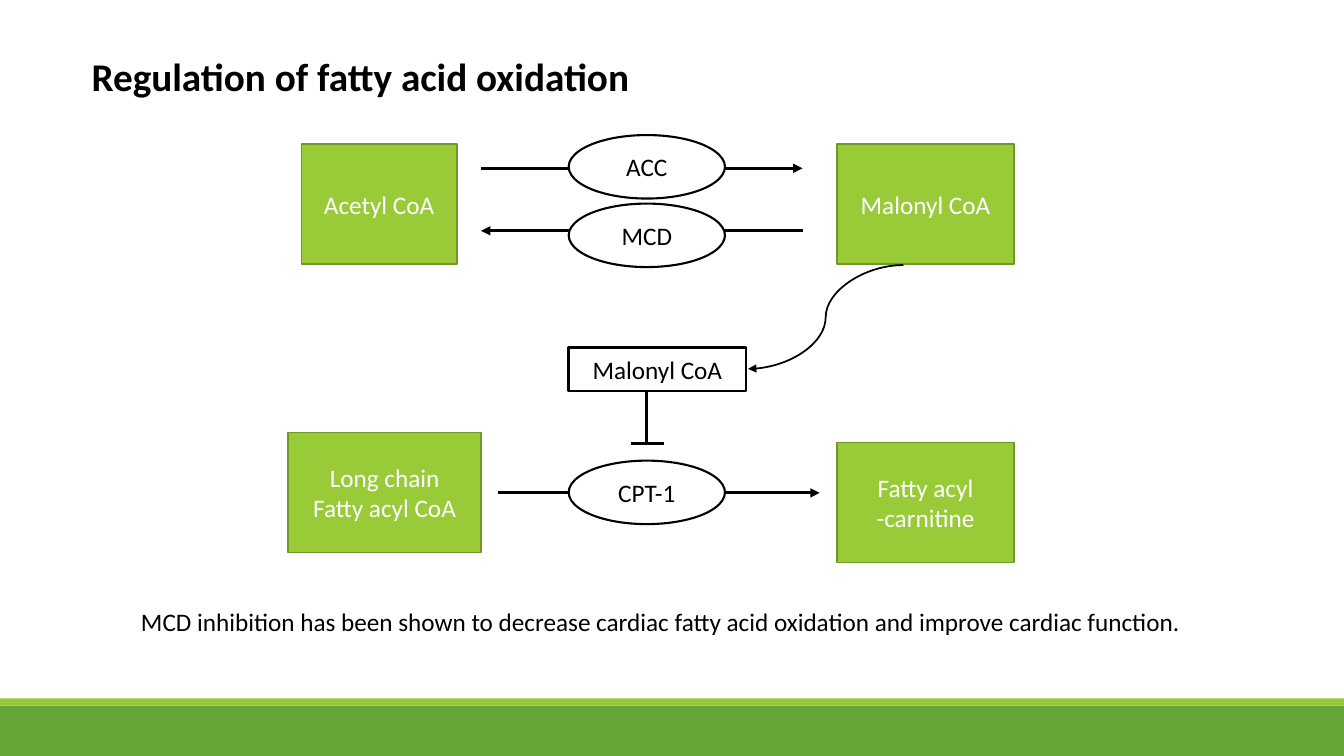
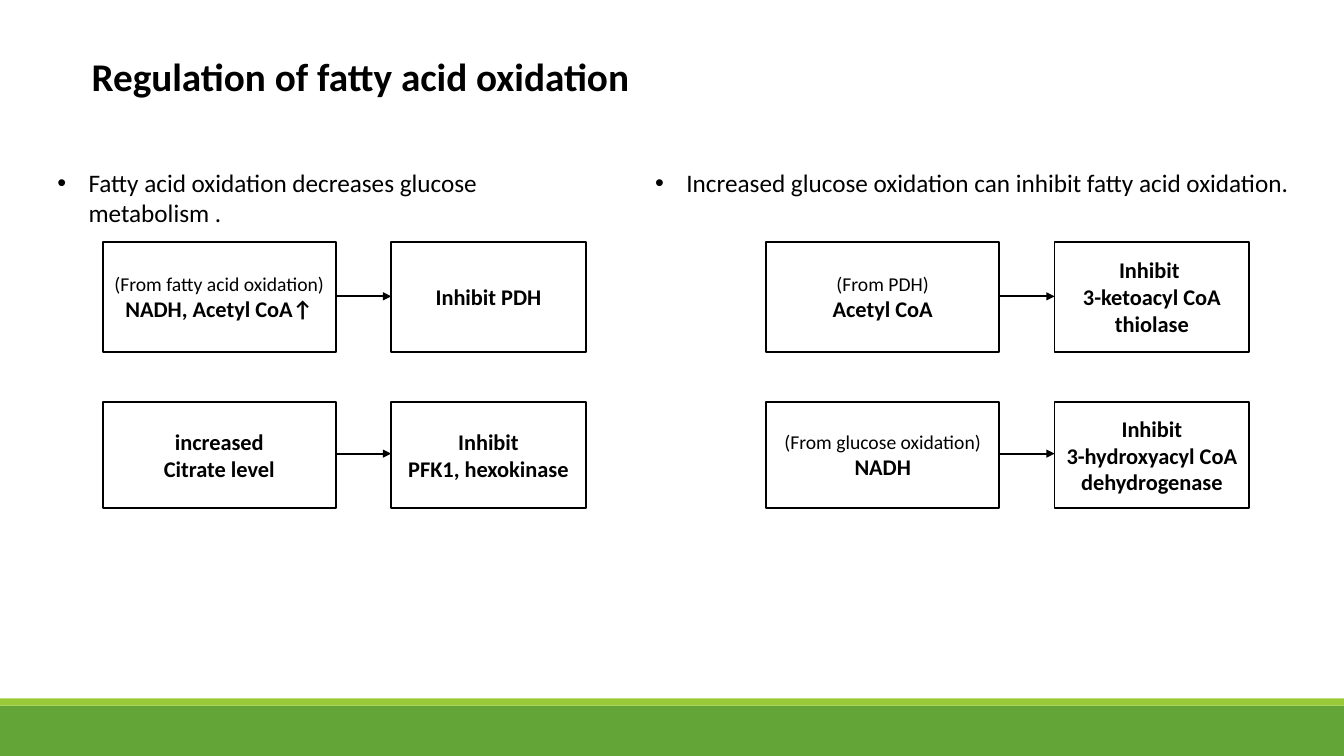
from dataclasses import dataclass

from lxml import etree
from pptx import Presentation
from pptx.dml.color import RGBColor
from pptx.enum.shapes import MSO_CONNECTOR, MSO_SHAPE
from pptx.enum.text import MSO_ANCHOR, PP_ALIGN
from pptx.oxml.ns import qn
from pptx.util import Inches, Pt

RECTANGLE, OVAL = MSO_SHAPE.RECTANGLE, MSO_SHAPE.OVAL
STRAIGHT, CURVE = MSO_CONNECTOR.STRAIGHT, MSO_CONNECTOR.CURVE
LEFT, CENTER = PP_ALIGN.LEFT, PP_ALIGN.CENTER
TOP, MIDDLE = MSO_ANCHOR.TOP, MSO_ANCHOR.MIDDLE


@dataclass(frozen=True)
class Theme:
    font: str = "Calibri"
    black: str = "000000"
    white: str = "FFFFFF"
    lime: str = "99CB38"
    olive: str = "719629"
    green: str = "63A537"
    title_size: int = 28
    body_size: int = 18
    key_size: int = 16
    note_size: int = 14


THEME = Theme()
SLIDE_WIDTH, SLIDE_HEIGHT = 13.33, 7.5
TITLE = "Regulation of fatty acid oxidation"


@dataclass(frozen=True)
class Look:
    fill: str | None
    line: str | None
    weight: float = 0
    text: str = THEME.black


SUBSTRATE = Look(THEME.lime, THEME.olive, 1.25, THEME.white)
ENZYME = Look(THEME.white, THEME.black, 1.5)
INHIBITOR = Look(None, THEME.black, 2)
STEP = Look(THEME.white, THEME.black, 1.25)


def set_attributes(target, values):
    for name, value in values.items():
        setattr(target, name, value)


def inches(*lengths):
    return [Inches(length) for length in lengths]


def write(shape, lines, color, alignment=LEFT, anchor=TOP):
    """Fill a shape with paragraphs given as (text, size, bold)."""
    frame = shape.text_frame
    set_attributes(frame, {"word_wrap": True, "vertical_anchor": anchor})
    for index, (text, size, bold) in enumerate(lines):
        paragraph = frame.add_paragraph() if index else frame.paragraphs[0]
        paragraph.alignment = alignment
        run = paragraph.add_run()
        run.text = text
        set_attributes(run.font, {"name": THEME.font, "size": Pt(size), "bold": bold})
        run.font.color.rgb = RGBColor.from_string(color)


def add_node(slide, kind, box, look, lines=()):
    shape = slide.shapes.add_shape(kind, *inches(*box))
    shape.shadow.inherit = False
    if look.fill:
        shape.fill.solid()
        shape.fill.fore_color.rgb = RGBColor.from_string(look.fill)
    else:
        shape.fill.background()
    if look.line:
        shape.line.color.rgb = RGBColor.from_string(look.line)
        shape.line.width = Pt(look.weight)
    else:
        shape.line.fill.background()
    write(shape, lines, look.text, CENTER, MIDDLE)


def add_line(slide, start, end, weight, kind=STRAIGHT, arrow=True):
    connector = slide.shapes.add_connector(kind, *inches(*start, *end))
    connector.line.color.rgb = RGBColor.from_string(THEME.black)
    connector.line.width = Pt(weight)
    if arrow:
        etree.SubElement(connector.line._get_or_add_ln(), qn("a:tailEnd"), type="triangle")
    etree.SubElement(connector._element.spPr, qn("a:effectLst"))


def add_text(slide, box, text, size=THEME.body_size, bold=False):
    text_box = slide.shapes.add_textbox(*inches(*box))
    write(text_box, [(text, size, bold)], THEME.black)
    return text_box


def add_bullet(slide, box, text):
    paragraph = add_text(slide, box, text).text_frame.paragraphs[0]
    properties = paragraph._p.get_or_add_pPr()
    indent = Inches(0.31)
    properties.set("marL", str(indent))
    properties.set("indent", str(-indent))
    etree.SubElement(properties, qn("a:buFont"), typeface="Arial")
    etree.SubElement(properties, qn("a:buChar"), char="•")


def add_base_slide(presentation):
    """Add a blank slide with the shared title and footer bands."""
    slide = presentation.slides.add_slide(presentation.slide_layouts[6])
    for top, height, color in ((7, 0.5, THEME.green), (6.93, 0.07, THEME.lime)):
        add_node(slide, RECTANGLE, (0, top, SLIDE_WIDTH, height), Look(color, None))
    add_text(slide, (0.81, 0.47, 5.81, 0.57), TITLE, THEME.title_size, True)
    return slide


def body(*texts):
    return [(text, THEME.body_size, False) for text in texts]


def key(*texts):
    return [(text, THEME.key_size, True) for text in texts]


def note(text):
    return [(text, THEME.note_size, False)]


def add_pathway_slide(presentation):
    slide = add_base_slide(presentation)
    substrates = (
        (2.99, 1.43, 1.54, ("Acetyl CoA",)),
        (8.3, 1.43, 1.76, ("Malonyl CoA",)),
        (2.86, 4.29, 1.91, ("Long chain", "Fatty acyl CoA")),
        (8.3, 4.39, 1.76, ("Fatty acyl", "-carnitine")),
    )
    for left, top, width, texts in substrates:
        add_node(slide, RECTANGLE, (left, top, width, 1.19), SUBSTRATE, body(*texts))

    reactions = (
        ("ACC", 1.34, 4.77, 7.96, 1.67),
        ("MCD", 2.02, 7.96, 4.77, 2.29),
        ("CPT-1", 4.57, 4.94, 8.13, 4.89),
    )
    for enzyme, top, start, end, level in reactions:
        add_line(slide, (start, level), (end, level), 2.25)
        add_node(slide, OVAL, (5.64, top, 1.55, 0.63), ENZYME, body(enzyme))

    add_line(slide, (8.96, 2.63), (7.42, 3.66), 1.25, CURVE)
    add_node(slide, RECTANGLE, (5.64, 3.45, 1.76, 0.43), INHIBITOR, body("Malonyl CoA"))
    for start, end in (((6.41, 3.88), (6.41, 4.4)), ((6.26, 4.4), (6.59, 4.4))):
        add_line(slide, start, end, 2, arrow=False)
    add_text(
        slide,
        (1.3, 5.97, 10.89, 0.4),
        "MCD inhibition has been shown to decrease cardiac fatty acid oxidation "
        "and improve cardiac function.",
    )


def add_feedback_column(slide, bullet_box, bullet, left, rows):
    """Add a bullet above rows of cause and effect boxes joined by arrows."""
    add_bullet(slide, bullet_box, bullet)
    cause_width, gap, effect_width = 2.31, 0.55, 1.93
    arrow_start = left + cause_width
    arrow_end = arrow_start + gap
    levels = ((2.4, 1.09, 2.94), (3.99, 1.05, 4.5))
    for (top, height, arrow_level), (cause, effect) in zip(levels, rows):
        add_node(slide, RECTANGLE, (left, top, cause_width, height), STEP, cause)
        add_node(slide, RECTANGLE, (arrow_end, top, effect_width, height), STEP, effect)
        add_line(slide, (arrow_start, arrow_level), (arrow_end, arrow_level), 1.5)


def add_feedback_slide(presentation):
    slide = add_base_slide(presentation)
    add_feedback_column(
        slide, (0.47, 1.61, 5.7, 0.4),
        "Fatty acid oxidation decreases glucose metabolism .", 1.02,
        (
            (note("(From fatty acid oxidation)") + key("NADH, Acetyl CoA↑"),
             key("Inhibit PDH")),
            (key("increased", "Citrate level"), key("Inhibit", "PFK1, hexokinase")),
        ),
    )
    add_feedback_column(
        slide, (6.4, 1.61, 6.54, 0.4),
        "Increased glucose oxidation can inhibit fatty acid oxidation.", 7.6,
        (
            (note("(From PDH)") + key("Acetyl CoA"),
             key("Inhibit ", "3-ketoacyl CoA", "thiolase")),
            (note("(From glucose oxidation)") + key("NADH"),
             key("Inhibit", "3-hydroxyacyl CoA", "dehydrogenase")),
        ),
    )


def main():
    presentation = Presentation()
    set_attributes(presentation, {
        "slide_width": Inches(SLIDE_WIDTH),
        "slide_height": Inches(SLIDE_HEIGHT),
    })
    add_pathway_slide(presentation)
    add_feedback_slide(presentation)
    presentation.save("out.pptx")


if __name__ == "__main__":
    main()
